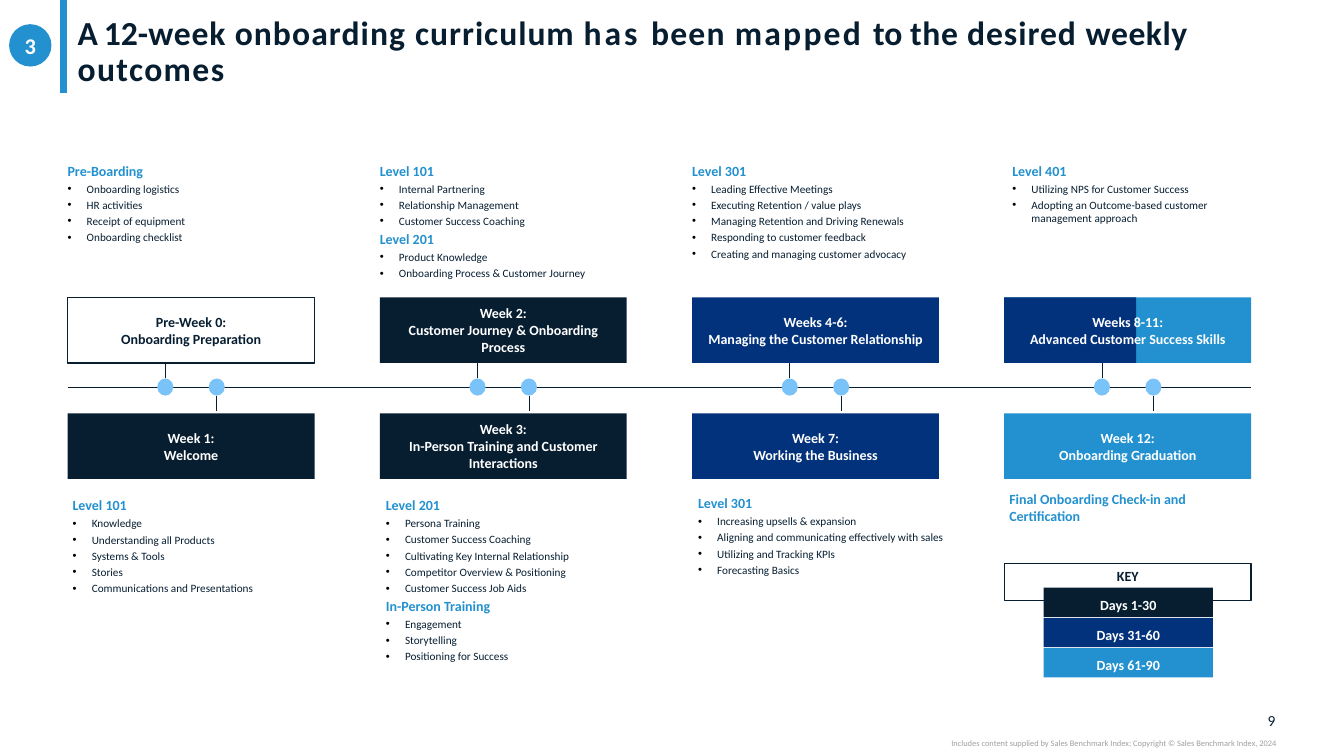
from dataclasses import dataclass

from lxml.etree import SubElement
from pptx import Presentation
from pptx.dml.color import RGBColor
from pptx.enum.shapes import MSO_CONNECTOR, MSO_SHAPE
from pptx.enum.text import MSO_ANCHOR, MSO_AUTO_SIZE, PP_ALIGN
from pptx.oxml.ns import qn
from pptx.util import Inches, Pt


@dataclass(frozen=True)
class Theme:
    font: str = "Calibri"
    navy: str = "071E31"
    royal: str = "03327C"
    blue: str = "2391CF"
    sky: str = "7AC3F8"
    white: str = "FFFFFF"
    black: str = "000000"
    grey: str = "A0A0A0"
    title: int = 24
    badge: int = 16
    number: int = 11
    label: int = 10
    item: int = 8
    credit: int = 6


THEME = Theme()

# Grid: four columns between the margins, rows measured from the top
SLIDE_WIDTH, SLIDE_HEIGHT = 13.33, 7.5
LEFT, RIGHT, COLUMN_WIDTH, COLUMNS = 0.67, 12.41, 2.45, 4
PITCH = (RIGHT - LEFT - COLUMN_WIDTH) / (COLUMNS - 1)
ROW = {"upper list": 1.61, "upper box": 2.95, "axis": 3.84, "lower box": 4.1, "key": 5.59}
BOX_HEIGHT = 0.65
DOT_WIDTH, DOT_HEIGHT = 0.16, 0.17
HEADING_HEIGHT, ITEM_HEIGHT = 0.18, 0.16
INDENT = 0.19

TITLE = [
    ("A ", -1.2), ("12-", 0), ("week ", 0.6), ("onboarding ", 0.8), ("curriculum ", 0.7),
    ("has ", 2.1), ("been ", 0.9), ("mapped ", 1.6), ("to ", 0), ("the ", 0.5),
    ("desired ", 0.7), ("weekly ", 0.4), ("outcomes", 1),
]

# Each week: lines of text, fill, text colour, outline
UPPER_WEEKS = [
    (["Pre-Week 0:", "Onboarding Preparation"], THEME.white, THEME.navy, THEME.navy),
    (["Week 2:", "Customer Journey & Onboarding Process"], THEME.navy, THEME.white, None),
    (["Weeks 4-6:", "Managing the Customer Relationship"], THEME.royal, THEME.white, None),
]
SPLIT_WEEKS = ["Weeks 8-11:", "Advanced Customer Success Skills"]
LOWER_WEEKS = [
    (["Week 1:", "Welcome"], THEME.navy),
    (["Week 3:", "In-Person Training and Customer Interactions"], THEME.navy),
    (["Week 7:", "Working the Business"], THEME.royal),
    (["Week 12:", "Onboarding Graduation"], THEME.blue),
]

# Each list: shift from its column, then headings with their items
UPPER_LISTS = [
    (0, {"Pre-Boarding": ["Onboarding logistics", "HR activities", "Receipt of equipment",
                          "Onboarding checklist"]}),
    (0, {"Level 101": ["Internal Partnering", "Relationship Management",
                       "Customer Success Coaching"],
         "Level 201": ["Product Knowledge", "Onboarding Process & Customer Journey"]}),
    (0, {"Level 301": ["Leading Effective Meetings", "Executing Retention / value plays",
                       "Managing Retention and Driving Renewals",
                       "Responding to customer feedback",
                       "Creating and managing customer advocacy"]}),
    (0.08, {"Level 401": ["Utilizing NPS for Customer Success",
                          "Adopting an Outcome-based customer management approach"]}),
]
# Lower lists also give their own top
LOWER_LISTS = [
    (0.05, 4.93, {"Level 101": ["Knowledge", "Understanding all Products", "Systems & Tools",
                                "Stories", "Communications and Presentations"]}),
    (0.06, 4.93, {"Level 201": ["Persona Training", "Customer Success Coaching",
                                "Cultivating Key Internal Relationship",
                                "Competitor Overview & Positioning",
                                "Customer Success Job Aids"],
                  "In-Person Training": ["Engagement", "Storytelling",
                                         "Positioning for Success"]}),
    (0.06, 4.91, {"Level 301": ["Increasing upsells & expansion",
                                "Aligning and communicating effectively with sales",
                                "Utilizing and Tracking KPIs", "Forecasting Basics"]}),
    (0.05, 4.87, {"Final Onboarding Check-in and Certification": []}),
]
KEY = [("Days 1-30", THEME.navy), ("Days 31-60", THEME.royal), ("Days 61-90", THEME.blue)]


def column(index):
    return LEFT + index * PITCH


def apply(target, values):
    for name, value in values.items():
        setattr(target, name, value)


def place(box, left, top, width, height):
    lengths = {"left": left, "top": top, "width": width, "height": height}
    apply(box, {name: Inches(value) for name, value in lengths.items()})


def set_frame(box, anchor=MSO_ANCHOR.TOP, insets=(0, 0, 0, 0)):
    sides = ("margin_left", "margin_top", "margin_right", "margin_bottom")
    apply(box.text_frame, {"word_wrap": True, "auto_size": MSO_AUTO_SIZE.NONE,
                           "vertical_anchor": anchor,
                           **{side: Inches(inset) for side, inset in zip(sides, insets)}})


def add_span(para, text, size, color, bold=False, spacing=0):
    span = para.add_run()
    span.text = text
    apply(span.font, {"name": THEME.font, "size": Pt(size), "bold": bold})
    span.font.color.rgb = RGBColor.from_string(color)
    if spacing:
        span._r.get_or_add_rPr().set("spc", str(round(spacing * 100)))


def add_para(frame, first, **values):
    para = frame.paragraphs[0] if first else frame.add_paragraph()
    apply(para, values)
    return para


def write_lines(box, lines, size, color, bold=True, align=PP_ALIGN.CENTER):
    for number, line in enumerate(lines):
        add_span(add_para(box.text_frame, number == 0, alignment=align),
                 line, size, color, bold)


def set_bullet(para, bulleted):
    properties = para._p.get_or_add_pPr()
    indent = Inches(INDENT) if bulleted else 0
    properties.set("marL", str(indent))
    properties.set("indent", str(-indent))
    if bulleted:
        SubElement(SubElement(properties, qn("a:buClr")), qn("a:srgbClr"), val=THEME.black)
        SubElement(properties, qn("a:buFont"), typeface="Arial")
        SubElement(properties, qn("a:buChar"), char="•")
    else:
        SubElement(properties, qn("a:buNone"))


def fill_list(box, left, top, sections):
    lines = []
    for heading, items in sections.items():
        lines += [(heading, False)] + [(item, True) for item in items]
    height = sum(ITEM_HEIGHT if is_item else HEADING_HEIGHT for _, is_item in lines)
    place(box, left, top, COLUMN_WIDTH, height)
    set_frame(box)
    for number, (text, is_item) in enumerate(lines):
        para = add_para(box.text_frame, number == 0, alignment=PP_ALIGN.LEFT,
                        space_before=Pt(2 if number else 0))
        set_bullet(para, is_item)
        style = (THEME.item, THEME.navy, False) if is_item else (THEME.label, THEME.blue, True)
        add_span(para, text, *style)


def add_text(page, left, top, width, height):
    return page.shapes.add_textbox(*map(Inches, (left, top, width, height)))


def add_block(page, area, fill, lines=(), color=THEME.white, outline=None,
              size=THEME.label, kind=MSO_SHAPE.RECTANGLE, insets=(0.1, 0.05, 0.1, 0.05)):
    block = page.shapes.add_shape(kind, *map(Inches, area))
    block.shadow.inherit = False
    block.fill.solid()
    block.fill.fore_color.rgb = RGBColor.from_string(fill)
    if outline:
        block.line.color.rgb = RGBColor.from_string(outline)
        block.line.width = Pt(1)
    else:
        block.line.fill.background()
    set_frame(block, MSO_ANCHOR.MIDDLE, insets)
    write_lines(block, lines, size, color)


def add_line(page, start, end, color=THEME.navy, width=0.5):
    line = page.shapes.add_connector(MSO_CONNECTOR.STRAIGHT, *map(Inches, start + end))
    line.line.color.rgb = RGBColor.from_string(color)
    line.line.width = Pt(width)
    SubElement(line._element.spPr, qn("a:effectLst"))


def add_header(page):
    add_line(page, (0.63, 0), (0.63, 0.92), THEME.blue, 5)
    title = page.shapes.title
    place(title, LEFT, 0.04, 11.99, 0.84)
    set_frame(title, MSO_ANCHOR.BOTTOM, (0.1, 0, 0.1, 0))
    para = add_para(title.text_frame, True, alignment=PP_ALIGN.LEFT, line_spacing=0.9)
    for text, spacing in TITLE:
        add_span(para, text, THEME.title, THEME.navy, True, spacing)
    add_block(page, (0.09, 0.24, 0.42, 0.42), THEME.blue, ["3"], size=THEME.badge,
              kind=MSO_SHAPE.OVAL, insets=(0, 0, 0, 0))


def add_footer(page):
    number = add_text(page, 12.32, 7.05, 0.33, 0.19)
    set_frame(number, MSO_ANCHOR.MIDDLE)
    write_lines(number, ["9"], THEME.number, THEME.navy, False, PP_ALIGN.RIGHT)
    credit = add_text(page, 7.5, 7.32, 5.16, 0.1)
    set_frame(credit)
    write_lines(credit, ["Includes content supplied by Sales Benchmark Index; "
                         "Copyright © Sales Benchmark Index, 2024"],
                THEME.credit, THEME.grey, False, PP_ALIGN.RIGHT)


def add_weeks(page):
    upper, lower = ROW["upper box"], ROW["lower box"]
    for index, (lines, fill, color, outline) in enumerate(UPPER_WEEKS):
        add_block(page, (column(index), upper, COLUMN_WIDTH, BOX_HEIGHT),
                  fill, lines, color, outline)
    for index, (lines, fill) in enumerate(LOWER_WEEKS):
        add_block(page, (column(index), lower, COLUMN_WIDTH, BOX_HEIGHT), fill, lines)
    # The last upper box spans two periods
    area = (column(3), upper, COLUMN_WIDTH, BOX_HEIGHT)
    add_block(page, area, THEME.blue)
    add_block(page, (column(3), upper, 1.31, BOX_HEIGHT), THEME.royal)
    label = add_text(page, *area)
    set_frame(label, MSO_ANCHOR.MIDDLE, (0.1, 0.05, 0.1, 0.05))
    write_lines(label, SPLIT_WEEKS, THEME.label, THEME.white)


def add_timeline(page):
    axis, radius = ROW["axis"], DOT_HEIGHT / 2
    add_line(page, (LEFT, axis), (RIGHT, axis))
    stems = [(0.97, axis - radius, ROW["upper box"] + BOX_HEIGHT),
             (1.48, axis + radius, ROW["lower box"] - 0.02)]
    for index in range(COLUMNS):
        for shift, start, end in stems:
            center = column(index) + shift
            add_line(page, (center, start), (center, end))
            add_block(page, (center - DOT_WIDTH / 2, axis - radius, DOT_WIDTH, DOT_HEIGHT),
                      THEME.sky, kind=MSO_SHAPE.OVAL)


def add_lists(page):
    bodies = [box for box in page.placeholders if box.placeholder_format.idx > 0]
    for index, (body, (shift, sections)) in enumerate(zip(bodies, UPPER_LISTS)):
        fill_list(body, column(index) + shift, ROW["upper list"], sections)
    for index, (shift, top, sections) in enumerate(LOWER_LISTS):
        fill_list(add_text(page, 0, 0, 1, 1), column(index) + shift, top, sections)


def add_key(page):
    top = ROW["key"]
    add_block(page, (column(3), top, COLUMN_WIDTH, 0.37), THEME.white, ["KEY"],
              THEME.navy, THEME.navy, insets=(0.1, 0, 0.1, 0.12))
    for number, (days, fill) in enumerate(KEY):
        add_block(page, (column(3) + 0.39, top + 0.24 + 0.3 * number, 1.68, 0.29),
                  fill, [days], insets=(0.1, 0.05, 0.1, 0))


def main():
    deck = Presentation()
    apply(deck, {"slide_width": Inches(SLIDE_WIDTH), "slide_height": Inches(SLIDE_HEIGHT)})
    page = deck.slides.add_slide(deck.slide_layouts.get_by_name("Comparison"))
    for add_part in (add_header, add_footer, add_weeks, add_timeline, add_lists, add_key):
        add_part(page)
    deck.save("out.pptx")


if __name__ == "__main__":
    main()
